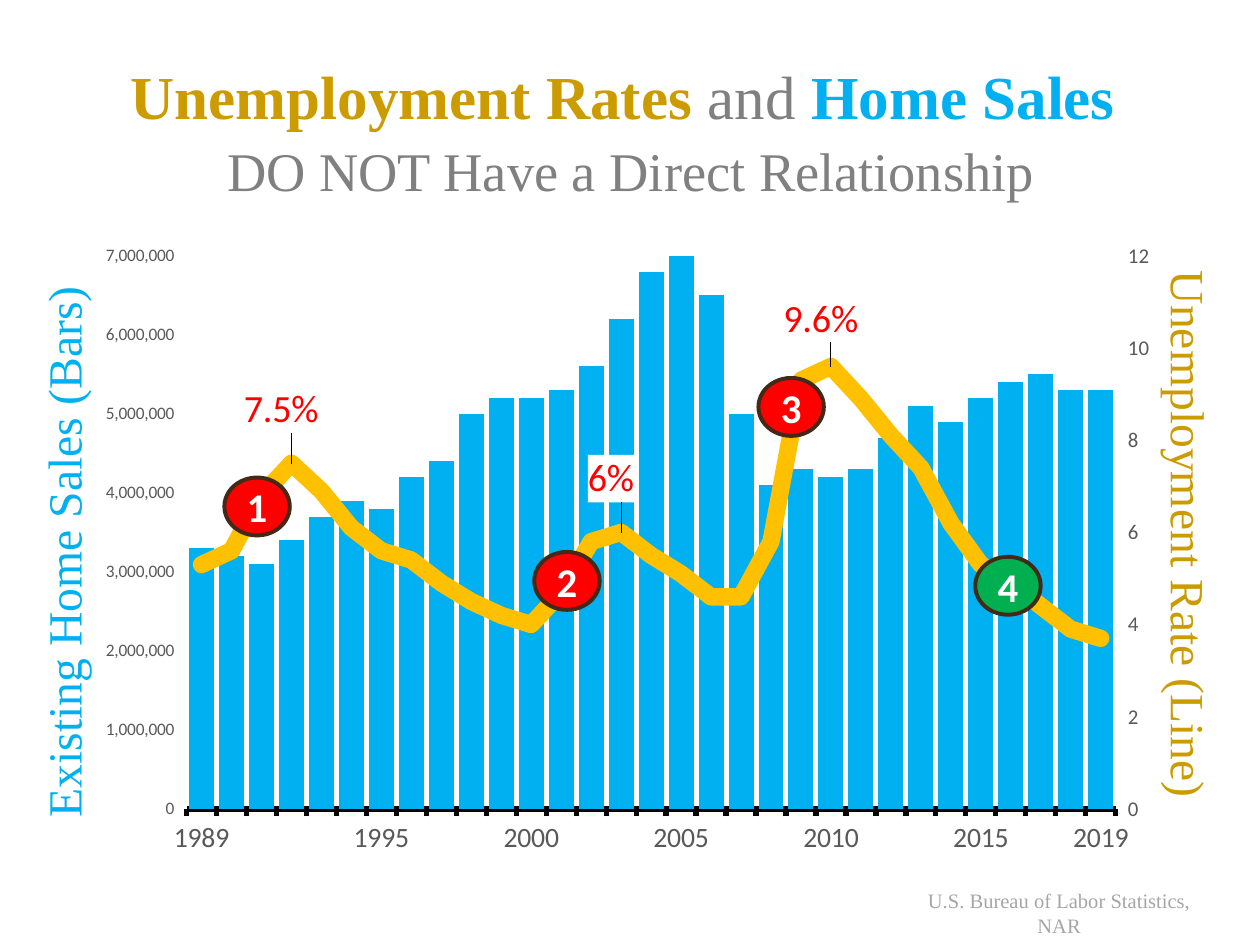
from copy import deepcopy

from pptx import Presentation
from pptx.chart.data import CategoryChartData
from pptx.dml.color import RGBColor
from pptx.enum.chart import XL_CHART_TYPE, XL_LABEL_POSITION, XL_MARKER_STYLE
from pptx.enum.shapes import MSO_SHAPE
from pptx.enum.text import MSO_ANCHOR, PP_ALIGN
from pptx.oxml import parse_xml
from pptx.oxml.ns import nsdecls, qn
from pptx.util import Pt

# Content
SERIF, SANS = "Times New Roman", "Calibri"
BLUE, GOLD, GRAY, RED, GREEN = "00B0F0", "CC9B00", "808080", "FF0000", "00B050"

FIRST_YEAR, LAST_YEAR = 1989, 2019
LABELLED_YEARS = {1989, 1995, 2000, 2005, 2010, 2015, 2019}
SALES_MILLIONS = [
    3.3, 3.2, 3.1, 3.4, 3.7, 3.9, 3.8, 4.2, 4.4, 5.0, 5.2, 5.2, 5.3, 5.6, 6.2, 6.8,
    7.1, 6.5, 5.0, 4.1, 4.3, 4.2, 4.3, 4.7, 5.1, 4.9, 5.2, 5.4, 5.5, 5.3, 5.3]
UNEMPLOYMENT = [
    5.3, 5.6, 6.8, 7.5, 6.9, 6.1, 5.6, 5.4, 4.9, 4.5, 4.2, 4, 4.7, 5.8, 6, 5.5,
    5.1, 4.6, 4.6, 5.8, 9.3, 9.6, 8.9, 8.1, 7.4, 6.2, 5.3, 4.9, 4.4, 3.9, 3.7]

# Peak labels: year, text, shift as a share of the chart, white backing
PEAKS = [(1992, "7.5%", (-0.01, -0.04), False),
         (2003, "6%", (-0.01, -0.04), True),
         (2010, "9.6%", (-0.01, -0.03), False)]

# Paragraphs are (size, runs); runs are (text, colour, bold)
TITLE = [(34.9, [("Unemployment Rates ", GOLD, True), ("and ", GRAY, False),
                 ("Home Sales ", BLUE, True)]),
         (31.1, [("DO NOT Have a Direct Relationship", GRAY, False)])]
LEFT_CAPTION = [(27.2, [("Existing Home Sales (Bars)", BLUE, False)])]
RIGHT_CAPTION = [(27.2, [("Unemployment Rate (Line)", GOLD, False)])]
SOURCE = [(11.7, [("U.S. Bureau of Labor Statistics, NAR", "A6A6A6", False)])]

# Text boxes: paragraphs, left, top, width, height, rotation
TEXTS = [(SOURCE, 510.5, 504, 189.4, 35.3, 0),
         (TITLE, 10.8, 30, 699.1, 87.1, 0),
         (LEFT_CAPTION, -126, 295.2, 324, 40.3, 270),
         (RIGHT_CAPTION, 517.7, 285.1, 324, 40.3, 90)]

# Numbered markers: left, top, fill
MARKERS = [(128.2, 272.9, RED), (305.3, 315.4, RED),
           (433.4, 216, RED), (557.3, 318.2, GREEN)]
MARKER_SIZE = (37.4, 33.1)


def color(value):
    return RGBColor.from_string(value)


def set_font(font, name, size, value, bold=False):
    font.name, font.size, font.bold = name, Pt(size), bold
    font.color.rgb = color(value)


def add_text(page, paragraphs, left, top, width, height, rotation):
    box = page.shapes.add_textbox(Pt(left), Pt(top), Pt(width), Pt(height))
    box.rotation = rotation
    frame = box.text_frame
    frame.word_wrap = True
    for index, (size, runs) in enumerate(paragraphs):
        para = frame.add_paragraph() if index else frame.paragraphs[0]
        para.alignment = PP_ALIGN.CENTER
        if index:
            para.space_before = Pt(3)
        for text, value, bold in runs:
            span = para.add_run()
            span.text = text
            target = span.font if len(runs) > 1 else para.font
            set_font(target, SERIF, size, value, bold)


def add_marker(page, number, left, top, fill):
    oval = page.shapes.add_shape(MSO_SHAPE.OVAL, Pt(left), Pt(top), *map(Pt, MARKER_SIZE))
    oval.shadow.inherit = False
    oval.fill.solid()
    oval.fill.fore_color.rgb = color(fill)
    oval.line.color.rgb = color("432917")
    oval.line.width = Pt(2.25)
    frame = oval.text_frame
    frame.margin_left = frame.margin_right = frame.margin_top = frame.margin_bottom = 0
    frame.vertical_anchor = MSO_ANCHOR.MIDDLE
    para = frame.paragraphs[0]
    para.text = str(number)
    para.alignment = PP_ALIGN.CENTER
    set_font(para.font, SANS, 23.3, "FFFFFF", True)


def chart_xml(markup):
    """Parse one chart element, declaring its namespaces on the root tag."""
    name, rest = markup[1:].split(">", 1)
    return parse_xml(f"<{name} {nsdecls('c', 'a')}>{rest}")


def manual_layout(**settings):
    parts = "".join(f'<c:{key} val="{value}"/>' for key, value in settings.items())
    return chart_xml(f"<c:layout><c:manualLayout>{parts}</c:manualLayout></c:layout>")


def set_value(element, tag, value):
    element.find(".//" + qn(tag)).set("val", str(value))


def chart_node(chart, tag):
    return chart.element.find(".//" + qn(tag))


def remove_children(parent, tag):
    for child in parent.findall(qn(tag)):
        parent.remove(child)


def style_axes(chart):
    years = chart.category_axis
    set_font(years.tick_labels.font, SANS, 16, "595959")
    years.format.line.color.rgb = color("000000")
    years.format.line.width = Pt(3)
    node = chart_node(chart, "c:catAx")
    node.find(".//" + qn("a:bodyPr")).set("rot", "-60000000")
    node.find(qn("c:noMultiLvlLbl")).addprevious(
        parse_xml(f'<c:tickLblSkip {nsdecls("c")} val="1"/>'))
    sales = chart.value_axis
    sales.has_major_gridlines = False
    sales.minimum_scale, sales.maximum_scale, sales.major_unit = 0, 7000000, 1000000
    sales.tick_labels.number_format = "#,##0"
    sales.tick_labels.number_format_is_linked = False
    set_font(sales.tick_labels.font, SANS, 10, "595959")
    sales.format.line.fill.background()


def move_to_line(chart):
    """Put the second series on a line plot with its own right-hand axis."""
    bars = chart_node(chart, "c:barChart")
    series = bars.findall(qn("c:ser"))[1]
    remove_children(series, "c:invertIfNegative")
    line = chart_xml('<c:lineChart><c:grouping val="standard"/><c:varyColors val="0"/>'
                     '<c:marker val="1"/><c:axId val="5001"/><c:axId val="5002"/></c:lineChart>')
    line.find(qn("c:marker")).addprevious(series)
    bars.addnext(line)

    value_axis = chart_node(chart, "c:valAx")
    right_axis, hidden_axis = deepcopy(value_axis), deepcopy(chart_node(chart, "c:catAx"))
    for axis, own, other in ((right_axis, 5002, 5001), (hidden_axis, 5001, 5002)):
        set_value(axis, "c:axId", own)
        set_value(axis, "c:crossAx", other)
    for tag, value in (("c:axPos", "r"), ("c:crosses", "max"),
                       ("c:max", 12), ("c:majorUnit", 2)):
        set_value(right_axis, tag, value)
    right_axis.find(qn("c:numFmt")).set("formatCode", "General")
    right_axis.find(".//" + qn("a:defRPr")).set("sz", "1200")
    set_value(hidden_axis, "c:delete", 1)
    value_axis.addnext(right_axis)
    right_axis.addnext(hidden_axis)


def label_peaks(series):
    labels = series.data_labels
    labels.show_value = False
    for year, text, (shift_x, shift_y), backed in PEAKS:
        label = series.points[year - FIRST_YEAR].data_label
        para = label.text_frame.paragraphs[0]
        para.text = text
        set_font(para.runs[0].font, SANS, 22, RED)
        label.position = XL_LABEL_POSITION.ABOVE
        node = para.runs[0].font._element.xpath("ancestor::c:dLbl")[0]
        node.insert(1, manual_layout(x=shift_x, y=shift_y))
        if backed:
            node.find(qn("c:tx")).addnext(chart_xml(
                '<c:spPr><a:solidFill><a:srgbClr val="FFFFFF"/></a:solidFill></c:spPr>'))
    labels._element.append(chart_xml(
        '<c:extLst><c:ext uri="{CE6537A1-D6FC-4f65-9D91-7224C49458BB}" '
        'xmlns:c15="http://schemas.microsoft.com/office/drawing/2012/chart">'
        '<c15:showLeaderLines val="1"/></c:ext></c:extLst>'))


def add_sales_chart(page):
    data = CategoryChartData()
    data.categories = [str(year) if year in LABELLED_YEARS else ""
                       for year in range(FIRST_YEAR, LAST_YEAR + 1)]
    data.add_series("Series 1", [round(value * 1000000) for value in SALES_MILLIONS])
    data.add_series("Series 2", UNEMPLOYMENT)
    chart = page.shapes.add_chart(XL_CHART_TYPE.COLUMN_CLUSTERED, Pt(60.5), Pt(131.8),
                                  Pt(596.2), Pt(359.3), data).chart
    chart.has_legend = chart.has_title = False
    set_font(chart.font, SANS, 10, "000000")
    style_axes(chart)
    move_to_line(chart)
    area = chart_node(chart, "c:plotArea")
    remove_children(area, "c:layout")
    area.insert(0, manual_layout(layoutTarget="inner", xMode="edge", yMode="edge",
                                 x=0.07, y=0.04, w=0.9, h=0.88))
    bars, line = chart.plots
    bars.gap_width, bars.vary_by_categories = 20, False
    fill = bars.series[0].format.fill
    fill.solid()
    fill.fore_color.rgb = color(BLUE)
    rate = line.series[0]
    rate.smooth = False
    rate.marker.style = XL_MARKER_STYLE.NONE
    rate.format.line.color.rgb = color("FFC000")
    rate.format.line.width = Pt(10)
    rate._element.find(".//" + qn("a:ln")).set("cap", "rnd")
    label_peaks(rate)


deck = Presentation()
deck.slide_width, deck.slide_height = Pt(720), Pt(540)
page = deck.slides.add_slide(deck.slide_layouts[6])
add_sales_chart(page)
for text in TEXTS:
    add_text(page, *text)
for number, marker in enumerate(MARKERS, 1):
    add_marker(page, number, *marker)
deck.save("out.pptx")
